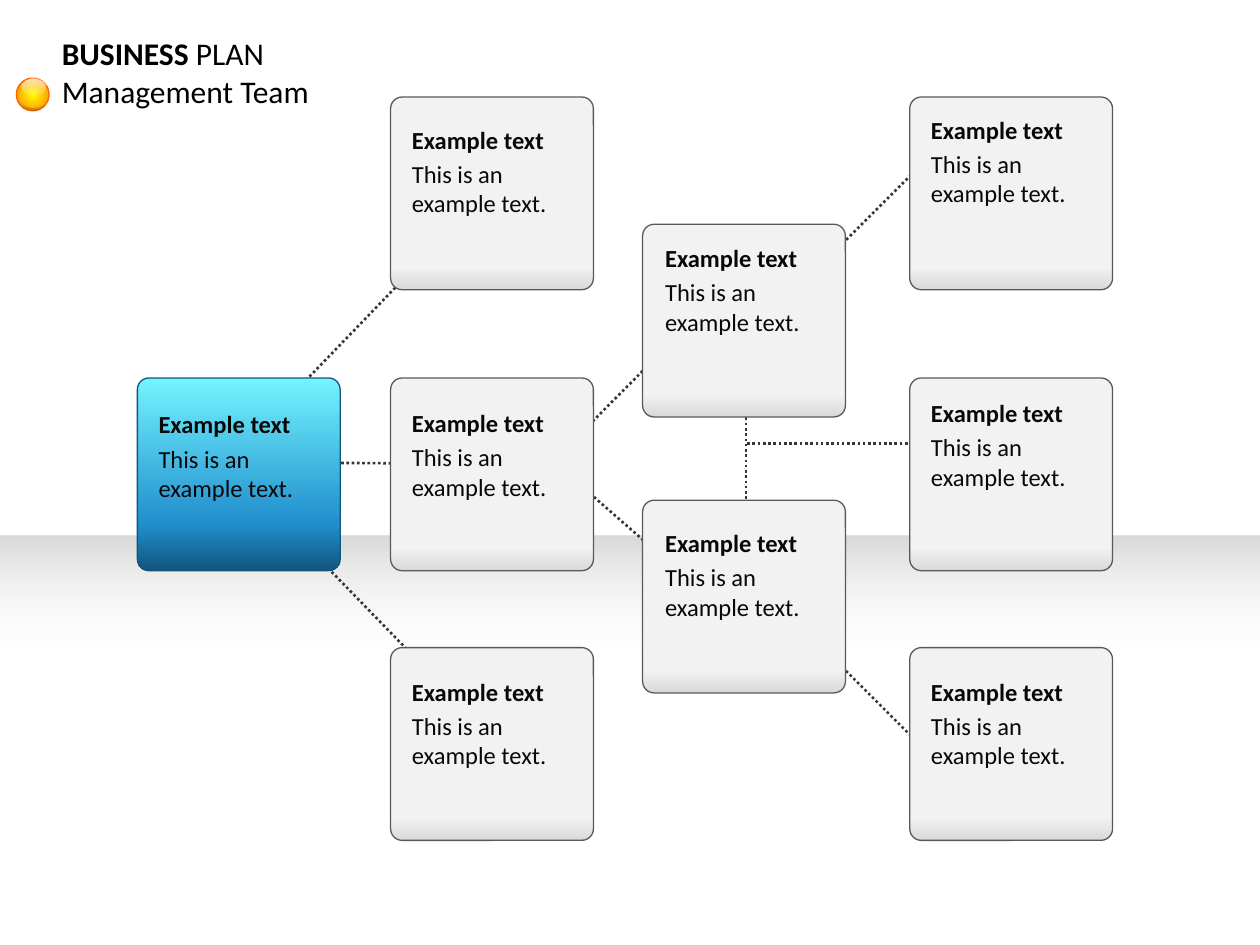
from lxml import etree
from pptx import Presentation
from pptx.dml.color import RGBColor
from pptx.enum.dml import MSO_LINE
from pptx.enum.shapes import MSO_CONNECTOR, MSO_SHAPE as SHP
from pptx.enum.text import MSO_ANCHOR, MSO_AUTO_SIZE, PP_ALIGN
from pptx.oxml import parse_xml
from pptx.oxml.ns import qn
from pptx.util import Inches, Pt

COLORS = {"text": "080808", "title": "000000", "dots": "353637",
          "card_edge": "595959", "blue_edge": "12557D", "orb_edge": "FF6600"}
A_NS = "http://schemas.openxmlformats.org/drawingml/2006/main"

# Gradient stops: position %, colour, opacity %
BAND = [(0, "D9D9D9", 100), (39, "FFFFFF", 0), (100, "FFFFFF", 0)]
CARD = [(0, "F2F2F2", 100), (88, "F2F2F2", 100), (100, "D9D9D9", 100)]
BLUE = [(0, "74F4FF", 100), (76, "208ECD", 100), (100, "12557D", 100)]
ORB = [(0, "FFFF00", 100), (100, "FF6600", 100)]
GLOSS = [(0, "FFFCF9", 77), (100, "FFFFFF", 0)]
SHADE = [(0, "000000", 24), (24, "000000", 24), (100, "FFFFFF", 0)]

prs = Presentation()
prs.slide_width, prs.slide_height = Inches(10), Inches(7.5)
s = prs.slides.add_slide(prs.slide_layouts[5])


def add_panel(parent, kind, box, stops, edge=None, radial=False, adj=None, turn=0):
    """Add a preset shape with a top-down or radial gradient."""
    sp = parent.add_shape(kind, *map(Inches, box))
    sp.shadow.inherit = False
    sp.rotation = turn
    if adj is not None:
        sp.adjustments[0] = adj
    gs = "".join(f'<a:gs pos="{pos * 1000}"><a:srgbClr val="{color}">'
                 f'<a:alpha val="{alpha * 1000}"/></a:srgbClr></a:gs>'
                 for pos, color, alpha in stops)
    way = ('<a:path path="circle"><a:fillToRect l="50000" t="50000" r="50000" b="50000"/></a:path>'
           if radial else '<a:lin ang="5400000" scaled="0"/>')
    fill = parse_xml(f'<a:gradFill xmlns:a="{A_NS}" rotWithShape="1">'
                     f'<a:gsLst>{gs}</a:gsLst>{way}</a:gradFill>')
    sp._element.spPr.find(qn("a:prstGeom")).addnext(fill)
    if edge:
        sp.line.color.rgb = RGBColor.from_string(COLORS[edge])
        sp.line.width = Pt(0.75)
    else:
        sp.line.fill.background()


def write(sp, paragraphs, size=14, color="text", before=0):
    """Fill a shape with paragraphs given as lists of (text, bold) runs."""
    tf = sp.text_frame
    tf.word_wrap = True
    tf.auto_size = MSO_AUTO_SIZE.NONE
    tf.vertical_anchor = MSO_ANCHOR.TOP
    for i, runs in enumerate(paragraphs):
        p = tf.add_paragraph() if i else tf.paragraphs[0]
        p.alignment = PP_ALIGN.LEFT
        p.space_before = Pt(before)
        for text, bold in runs:
            r = p.add_run()
            r.text = text
            r.font.name, r.font.size, r.font.bold = "Calibri", Pt(size), bold
            r.font.color.rgb = RGBColor.from_string(COLORS[color])


# Floor band
add_panel(s.shapes, SHP.RECTANGLE, (0, 4.25, 10, 2.6), BAND)

# Dotted links, behind the cards
links = [(5.93, 3.52, 7.93, 3.52), (5.92, 2.7, 7.29, 1.33), (7.29, 5.9, 5.92, 4.53),
         (5.92, 4.67, 5.92, 2.67), (1.79, 3.67, 3.79, 3.68), (1.79, 3.68, 3.42, 1.99),
         (1.79, 3.67, 3.42, 5.35), (4.38, 3.67, 5.74, 2.3), (4.4, 3.67, 5.92, 5)]
for ends in links:
    link = s.shapes.add_connector(MSO_CONNECTOR.STRAIGHT, *map(Inches, ends))
    link.line.color.rgb = RGBColor.from_string(COLORS["dots"])
    link.line.width = Pt(1.5)
    link.line.dash_style = MSO_LINE.ROUND_DOT
    etree.SubElement(link._element.spPr, qn("a:effectLst"))

# Cards: per column, its left edge, text left edge and (card top, text top) pairs
CARD_W, CARD_H = 1.61, 1.53
columns = [(1.09, 1.16, [(3, 3.2)]),
           (3.1, 3.17, [(0.77, 0.94), (3, 3.19), (5.14, 5.32)]),
           (5.1, 5.18, [(1.78, 1.88), (3.97, 4.14)]),
           (7.22, 7.29, [(0.77, 0.86), (3, 3.11), (5.14, 5.32)])]
for col, (left, text_left, rows) in enumerate(columns):
    stops, edge = (CARD, "card_edge") if col else (BLUE, "blue_edge")
    for top, text_top in rows:
        add_panel(s.shapes, SHP.ROUNDED_RECTANGLE, (left, top, CARD_W, CARD_H),
                  stops, edge, adj=0.06)
        tb = s.shapes.add_textbox(*map(Inches, (text_left, text_top, 1.42, 0.89)))
        write(tb, [[("Example text", True)], [("This is an example text.", False)]],
              before=2.8)

# Title
title = s.shapes.title
title.left, title.top, title.width, title.height = map(Inches, (0.39, 0.22, 2.29, 0.71))
write(title, [[("BUSINESS", True), (" PLAN", False)], [("Management Team", False)]],
      size=18, color="title")

# Orange orb beside the title
orb = s.shapes.add_group_shape().shapes
add_panel(orb, SHP.OVAL, (0.13, 0.62, 0.26, 0.26), ORB, "orb_edge", radial=True, turn=350.9)
add_panel(orb, SHP.OVAL, (0.17, 0.62, 0.19, 0.14), GLOSS)
add_panel(orb, SHP.MOON, (0.2, 0.69, 0.12, 0.26), SHADE, radial=True, adj=0.19, turn=275.9)

prs.save("out.pptx")
